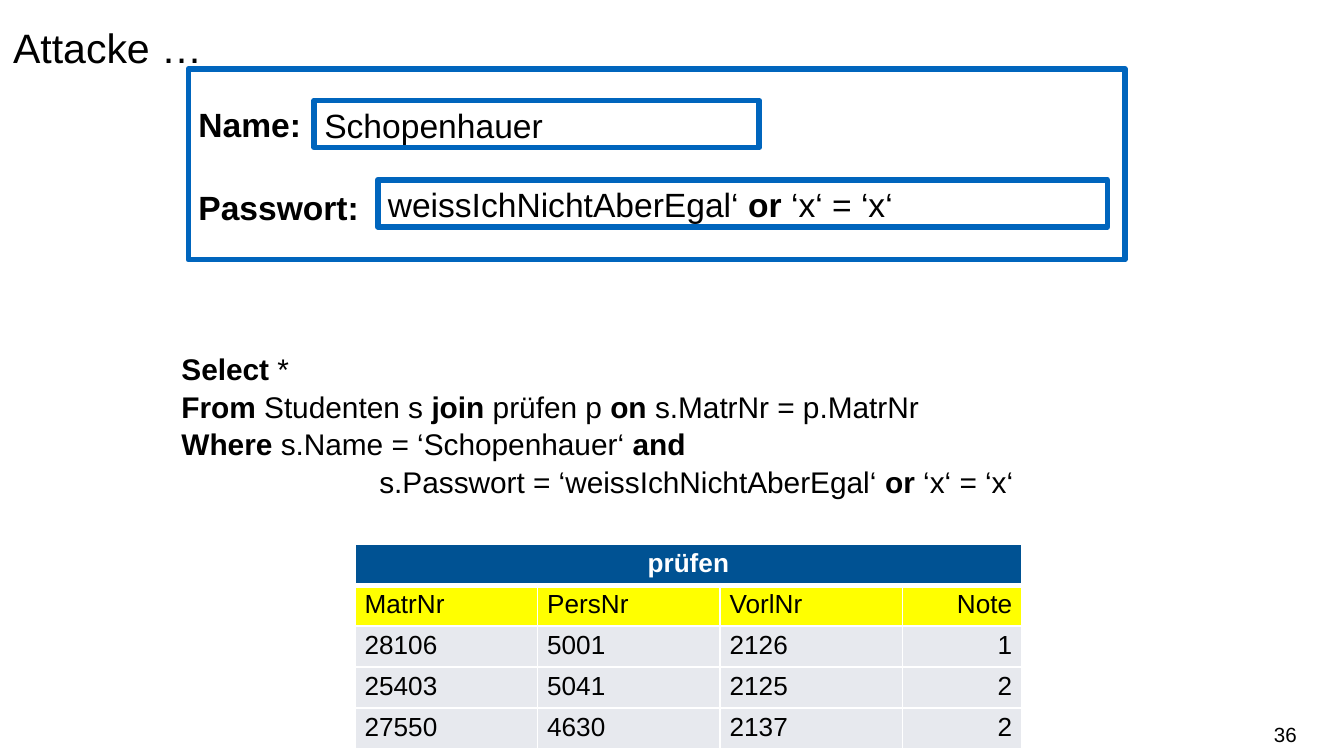
from dataclasses import dataclass

import pptx
import pptx.dml.color
import pptx.enum.shapes
import pptx.enum.text
import pptx.oxml
import pptx.oxml.ns
import pptx.util

Cm, Pt = pptx.util.Cm, pptx.util.Pt
ALIGN = pptx.enum.text.PP_ALIGN
ANCHOR = pptx.enum.text.MSO_ANCHOR


def rgb(value):
    return pptx.dml.color.RGBColor.from_string(value)


@dataclass(frozen=True)
class Theme:
    font: str = "Arial"
    text: str = "000000"
    white: str = "FFFFFF"
    frame: str = "0065BD"
    header: str = "005293"
    columns: str = "FFFF00"
    row: str = "E7E9EE"
    title_size: float = 22
    form_size: float = 18
    sql_size: float = 16
    table_size: float = 14
    number_size: float = 11
    spacing: float = 1.05


class SlideBuilder:
    def __init__(self, prs, theme):
        self.theme = theme
        self.s = prs.slides.add_slide(prs.slide_layouts[6])

    def fill_text(self, tf, paragraphs, size, bold=False, color=None,
                  align=ALIGN.LEFT, spacing=None):
        """Each paragraph is a string whose |marked| parts are bold."""
        for i, text in enumerate(paragraphs):
            p = tf.add_paragraph() if i else tf.paragraphs[0]
            p.alignment = align
            p.line_spacing = spacing or self.theme.spacing
            p.font.name = self.theme.font
            p.font.size = Pt(size)
            p.font.bold = bold
            p.font.color.rgb = rgb(color or self.theme.text)
            for j, part in enumerate(text.split("|")):
                if part:
                    r = p.add_run()
                    r.text = part
                    if j % 2:
                        r.font.bold = True

    def frame(self, tf, insets, anchor):
        tf.word_wrap = True
        tf.vertical_anchor = anchor
        tf.margin_left, tf.margin_top, tf.margin_right, tf.margin_bottom = map(Cm, insets)

    def text(self, box, paragraphs, size, insets, anchor=ANCHOR.TOP, **style):
        tf = self.s.shapes.add_textbox(*map(Cm, box)).text_frame
        self.frame(tf, insets, anchor)
        self.fill_text(tf, paragraphs, size, **style)
        return tf

    def field(self, box, paragraphs, bold=False):
        sp = self.s.shapes.add_shape(
            pptx.enum.shapes.MSO_SHAPE.RECTANGLE, *map(Cm, box))
        sp.shadow.inherit = False
        sp.fill.background()
        sp.line.color.rgb = rgb(self.theme.frame)
        sp.line.width = Pt(3)
        self.frame(sp.text_frame, (0.19, 0.1, 0.19, 0.1), ANCHOR.MIDDLE)
        self.fill_text(sp.text_frame, paragraphs, self.theme.form_size, bold)
        return sp.text_frame

    def borders(self, cell, bottom):
        tc_pr = cell._tc.get_or_add_tcPr()
        widths = {"lnL": 1, "lnR": 1, "lnT": 1, "lnB": bottom}
        for i, (tag, width) in enumerate(widths.items()):
            tc_pr.insert(i, pptx.oxml.parse_xml(
                f'<a:{tag} {pptx.oxml.ns.nsdecls("a")} w="{Pt(width)}"><a:solidFill>'
                f'<a:srgbClr val="{self.theme.white}"/></a:solidFill></a:{tag}>'))

    def table(self, left, top, widths, row_height, title, rows):
        t = self.theme
        grid = [[title] + [""] * (len(widths) - 1)] + rows
        table = self.s.shapes.add_table(
            len(grid), len(widths), Cm(left), Cm(top),
            Cm(sum(widths)), Cm(row_height * len(grid))).table
        for column, width in zip(table.columns, widths):
            column.width = Cm(width)
        for i, values in enumerate(grid):
            table.rows[i].height = Cm(row_height)
            fill = (t.header, t.columns)[i] if i < 2 else t.row
            for j, value in enumerate(values):
                cell = table.cell(i, j)
                cell.margin_left = cell.margin_right = Cm(0.18)
                cell.margin_top = cell.margin_bottom = Cm(0.09)
                cell.fill.solid()
                cell.fill.fore_color.rgb = rgb(fill)
                self.borders(cell, 1 if i else 3)
                last = j == len(widths) - 1
                align = ALIGN.CENTER if i == 0 else ALIGN.RIGHT if last else ALIGN.LEFT
                self.fill_text(cell.text_frame, [value], t.table_size, bold=i == 0,
                               color=None if i else t.white, align=align, spacing=1.0)
        table.cell(0, 0).merge(table.cell(0, len(widths) - 1))


def main():
    prs = pptx.Presentation()
    prs.slide_width, prs.slide_height = Cm(25.4), Cm(14.29)
    theme = Theme()
    slide = SlideBuilder(prs, theme)

    # Title
    slide.text((0, 0, 25.4, 2.39), ["Attacke …"], theme.title_size,
               (0.25, 0.2, 0.25, 0.13), spacing=1.25)

    # SQL query, last line indented
    tf = slide.text((3.18, 5.79, 19.05, 8.48), [
        "|Select| *",
        "|From |Studenten s |join| prüfen p |on |s.MatrNr = p.MatrNr",
        "|Where |s.Name = ‘Schopenhauer‘ |and|",
        "s.Passwort = ‘weissIchNichtAberEgal‘ |or| ‘x‘ = ‘x‘",
    ], theme.sql_size, (0.25, 0.81, 0.25, 0.13))
    tf.paragraphs[-1]._p.get_or_add_pPr().set("marL", str(Cm(3.74)))

    # Result table
    slide.table(6.71, 10.29, (3.45, 3.45, 3.45, 2.25), 0.77, "prüfen", [
        ["MatrNr", "PersNr", "VorlNr", "Note"],
        ["28106", "5001", "2126", "1"],
        ["25403", "5041", "2125", "2"],
        ["27550", "4630", "2137", "2"],
    ])

    # Login form with its two input fields
    tf = slide.field((3.56, 1.3, 17.7, 3.61), ["Name:", "Passwort:"], bold=True)
    tf.paragraphs[1].space_before = Pt(21.7)
    slide.field((5.94, 1.9, 8.41, 0.89), ["Schopenhauer"])
    slide.field((7.14, 3.4, 13.79, 0.89), ["weissIchNichtAberEgal‘ |or| ‘x‘ = ‘x‘"])

    # Slide number
    slide.text((18.82, 13.49, 5.69, 0.76), ["36"], theme.number_size,
               (0, 0.13, 0, 0.13), ANCHOR.MIDDLE, align=ALIGN.RIGHT)

    prs.save("out.pptx")


if __name__ == "__main__":
    main()
